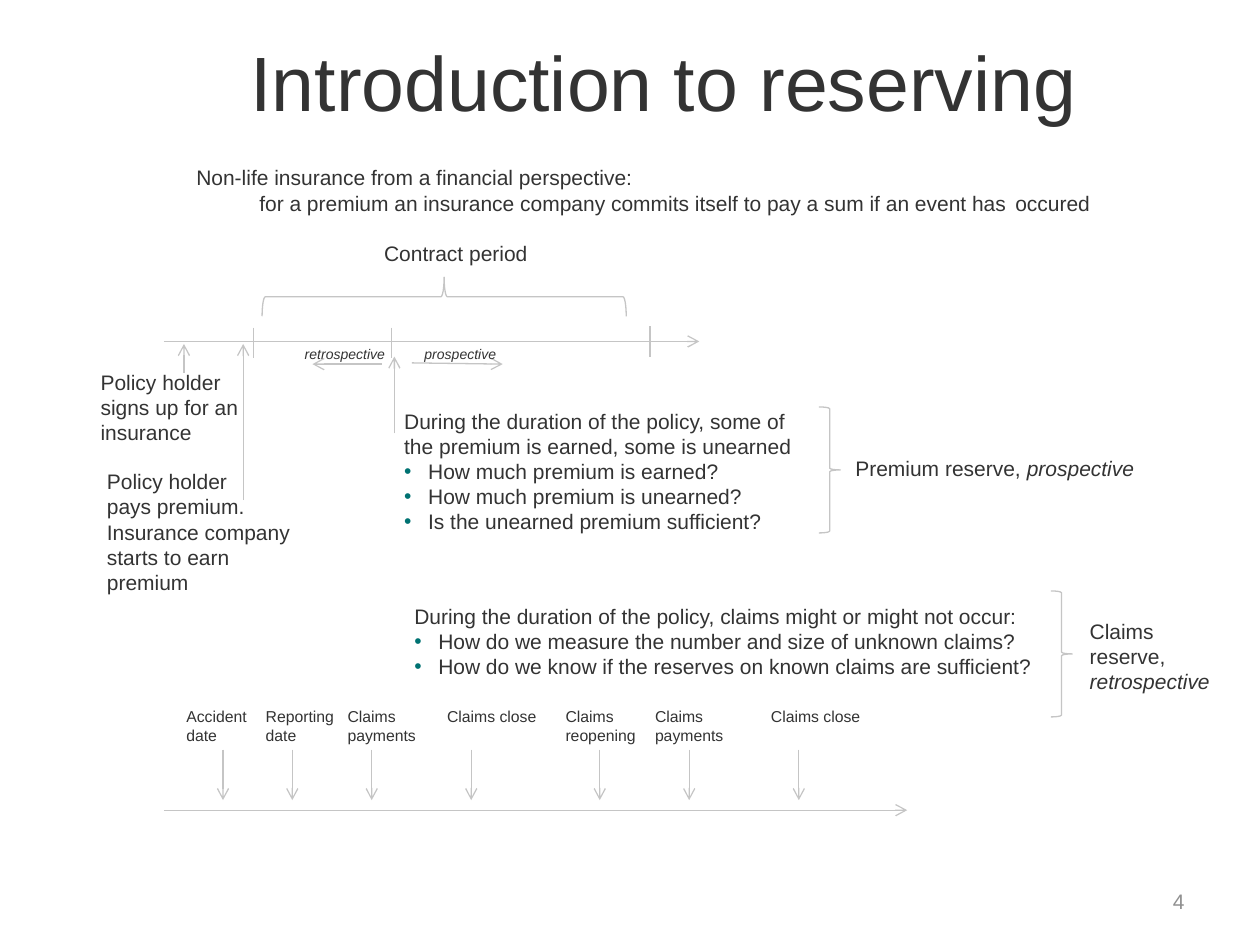
"""Build the slide that introduces insurance reserving."""
from dataclasses import dataclass

from lxml.etree import SubElement
from pptx import Presentation
from pptx.dml.color import RGBColor
from pptx.enum.shapes import MSO_CONNECTOR, MSO_SHAPE
from pptx.enum.text import MSO_ANCHOR, MSO_AUTO_SIZE, PP_ALIGN
from pptx.oxml.ns import qn
from pptx.util import Inches, Pt


@dataclass(frozen=True)
class Theme:
    font: str = "Arial"
    ink: str = "333333"
    muted: str = "909090"
    rule: str = "C5C5C5"
    accent: str = "007272"
    title: int = 44
    body: int = 12
    event: int = 9
    note: int = 8
    line: float = 0.75


class SlideBuilder:
    def __init__(self, slide, theme):
        self.slide = slide
        self.theme = theme

    def text(self, box, lines, size=None, color=None, bullets=(), wrap=False,
             align=PP_ALIGN.LEFT, anchor=MSO_ANCHOR.TOP, grow=True):
        frame = self.slide.shapes.add_textbox(*map(Inches, box)).text_frame
        frame.word_wrap = wrap
        frame.vertical_anchor = anchor
        frame.auto_size = MSO_AUTO_SIZE.SHAPE_TO_FIT_TEXT if grow else MSO_AUTO_SIZE.NONE
        for index, line in enumerate([*lines, *bullets]):
            paragraph = frame.add_paragraph() if index else frame.paragraphs[0]
            paragraph.alignment = align
            if index >= len(lines):
                self.bullet(paragraph)
            paragraph.font.name = self.theme.font
            paragraph.font.size = Pt(size or self.theme.body)
            paragraph.font.color.rgb = RGBColor.from_string(color or self.theme.ink)
            for position, part in enumerate(line.split("*")):
                if part:
                    run = paragraph.add_run()
                    run.text = part
                    if position % 2:
                        run.font.italic = True

    def bullet(self, paragraph):
        properties = paragraph._p.get_or_add_pPr()
        properties.set("marL", str(Inches(0.19)))
        properties.set("indent", str(-Inches(0.19)))
        color = SubElement(properties, qn("a:buClr"))
        SubElement(color, qn("a:srgbClr"), val=self.theme.accent)
        SubElement(properties, qn("a:buFont"), typeface=self.theme.font)
        SubElement(properties, qn("a:buChar"), char="•")

    def outline(self, line):
        line.color.rgb = RGBColor.from_string(self.theme.rule)
        line.width = Pt(self.theme.line)

    def line(self, start, end, arrow=True):
        connector = self.slide.shapes.add_connector(
            MSO_CONNECTOR.STRAIGHT, *map(Inches, (*start, *end)))
        self.outline(connector.line)
        if arrow:
            SubElement(connector.line._get_or_add_ln(), qn("a:tailEnd"), type="arrow")
        SubElement(connector._element.spPr, qn("a:effectLst"))

    def brace(self, box, rotation=0):
        shape = self.slide.shapes.add_shape(MSO_SHAPE.RIGHT_BRACE, *map(Inches, box))
        shape.rotation = rotation
        shape.shadow.inherit = False
        shape.fill.background()
        self.outline(shape.line)


def add_heading(builder):
    theme = builder.theme
    builder.text((0.98, 0.13, 8.58, 1.02), ["Introduction to reserving"], theme.title,
                 wrap=True, align=PP_ALIGN.CENTER, anchor=MSO_ANCHOR.MIDDLE, grow=False)
    builder.text((1.46, 1.26, 8.03, 0.5), [
        "Non-life insurance from a financial perspective:",
        "\tfor a premium an insurance company commits itself to pay a sum"
        " if an event has \toccured"], wrap=True)
    builder.text((7.17, 6.95, 2.33, 0.4), ["4"], color=theme.muted, wrap=True,
                 align=PP_ALIGN.RIGHT, anchor=MSO_ANCHOR.MIDDLE, grow=False)


def add_contract_timeline(builder):
    builder.line((1.3, 2.71), (5.55, 2.71))
    for x, top in ((2.01, 2.6), (3.11, 2.6), (5.16, 2.59)):
        builder.line((x, top), (x, top + 0.24), arrow=False)
    for x, bottom, top in ((1.46, 2.96, 2.73), (1.93, 3.97, 2.73), (3.13, 3.44, 2.83)):
        builder.line((x, bottom), (x, top))
    builder.line((3.27, 2.88), (3.99, 2.89))
    builder.line((3.03, 2.89), (2.48, 2.89))
    builder.brace((3.37, 0.91, 0.31, 2.89), rotation=270)
    builder.text((2.95, 1.86, 1.35, 0.3), ["Contract period"])
    builder.text((3.27, 2.69, 0.78, 0.24), ["*prospective*"], builder.theme.note)
    builder.text((2.32, 2.69, 0.85, 0.19), ["*retrospective*"], builder.theme.note)
    builder.text((0.7, 2.88, 1.3, 0.71),
                 ["Policy holder", "signs up for an", "insurance"])
    builder.text((0.75, 3.67, 1.78, 1.11),
                 ["Policy holder", "pays premium.", "Insurance company",
                  "starts to earn premium"], wrap=True)


def add_reserves(builder):
    builder.text((3.11, 3.19, 3.3, 1.11),
                 ["During the duration of the policy, some of",
                  "the premium is earned, some is unearned"],
                 bullets=["How much premium is earned?",
                          "How much premium is unearned?",
                          "Is the unearned premium sufficient?"])
    builder.brace((6.5, 3.23, 0.17, 1))
    builder.text((6.69, 3.57, 2.43, 0.3), ["Premium reserve, *prospective*"])
    builder.text((3.19, 4.74, 5.14, 0.71),
                 ["During the duration of the policy, claims might or might not occur:"],
                 bullets=["How do we measure the number and size of unknown claims?",
                          "How do we know if the reserves on known claims are sufficient?"])
    builder.brace((8.34, 4.69, 0.17, 1))
    builder.text((8.55, 4.86, 1.16, 0.71), ["Claims", "reserve,", "*retrospective*"])


def add_claims_timeline(builder):
    events = (
        (1.38, 0.69, 1.77, ["Accident", "date"]),
        (2.01, 0.75, 2.32, ["Reporting", "date"]),
        (2.66, 0.75, 2.95, ["Claims", "payments"]),
        (3.45, 0.92, 3.74, ["Claims close"]),
        (4.39, 0.76, 4.76, ["Claims", "reopening"]),
        (5.1, 0.75, 5.47, ["Claims", "payments"]),
        (6.02, 0.92, 6.34, ["Claims close"]),
    )
    builder.line((1.3, 6.43), (7.2, 6.43))
    for left, width, arrow_x, lines in events:
        height = 0.1 + 0.15 * len(lines)
        builder.text((left, 5.56, width, height), lines, builder.theme.event)
        builder.line((arrow_x, 5.95), (arrow_x, 6.35))


def main():
    presentation = Presentation()
    presentation.slide_width = Inches(10)
    presentation.slide_height = Inches(7.5)
    slide = presentation.slides.add_slide(presentation.slide_layouts[6])
    builder = SlideBuilder(slide, Theme())
    add_heading(builder)
    add_contract_timeline(builder)
    add_reserves(builder)
    add_claims_timeline(builder)
    presentation.save("out.pptx")


if __name__ == "__main__":
    main()
